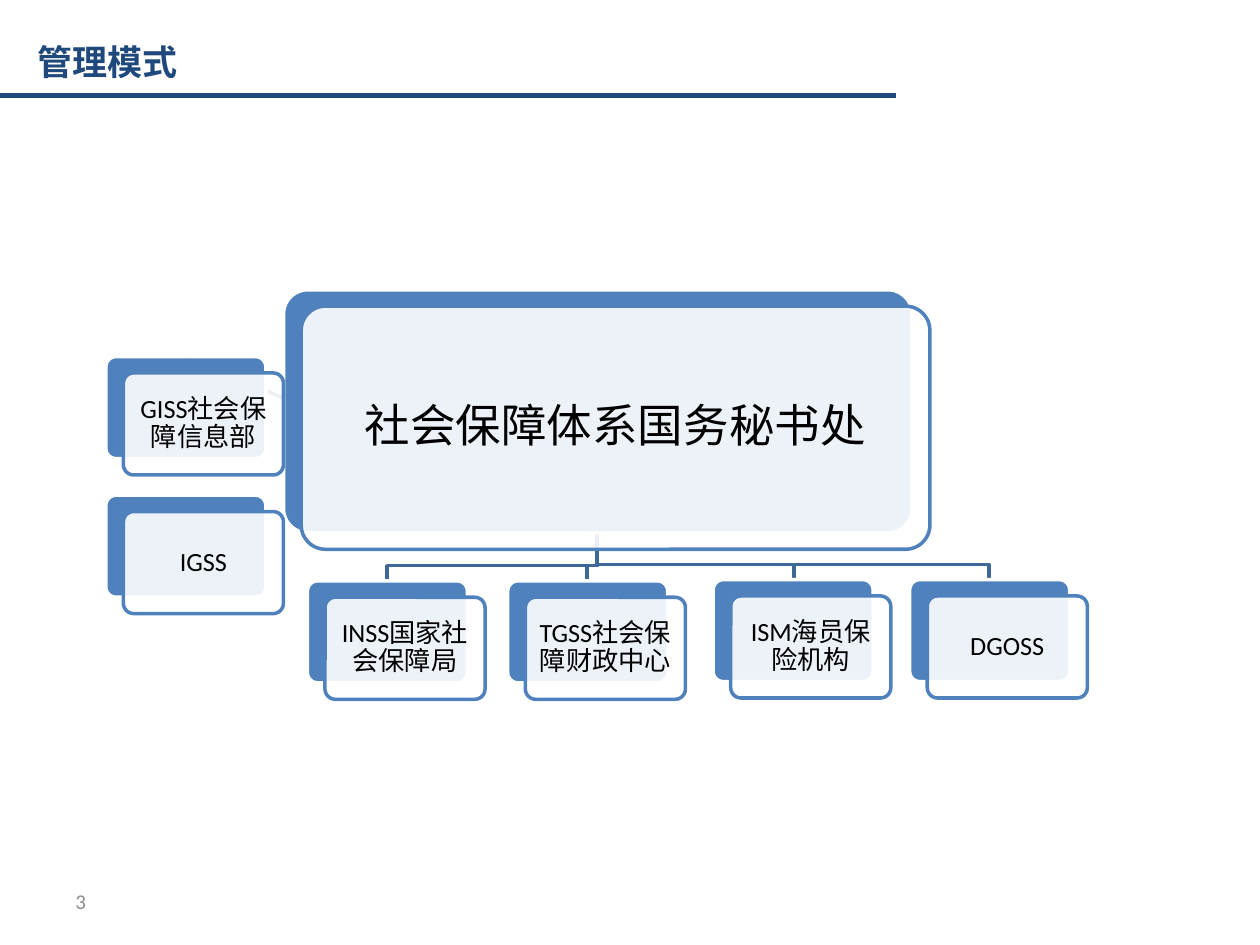
from dataclasses import dataclass
from typing import Optional

from lxml.etree import SubElement
from pptx import Presentation
from pptx.dml.color import RGBColor
from pptx.enum.shapes import MSO_CONNECTOR, MSO_SHAPE
from pptx.enum.text import MSO_ANCHOR, PP_ALIGN
from pptx.oxml.ns import qn
from pptx.util import Inches, Pt

FONT = "Calibri"
BLUE, NAVY, STEEL = "4F81BD", "1F497D", "3F6797"
WHITE, BLACK, GRAY = "FFFFFF", "000000", "8C8C8C"
SHIFT_X, SHIFT_Y = 0.14, 0.13
ROOT_X, ROOT_Y = 4.74, 4.23


@dataclass
class Node:
    text: str
    left: float
    top: float
    link: Optional[float] = None
    width: float = 1.27
    height: float = 0.81
    size: int = 15
    inset: float = 0.06


NODES = [
    Node("社会保障体系国务秘书处", 2.25, 2.3, None, 4.99, 1.93, 26, 0.11),
    Node("INSS国家社会保障局", 2.44, 4.61, 3.07),
    Node("TGSS社会保障财政中心", 4.03, 4.61, 4.66),
    Node("GISS社会保障信息部", 0.84, 2.83),
    Node("ISM海员保险机构", 5.66, 4.6, 6.3),
    Node("DGOSS", 7.22, 4.6, 7.85),
    Node("IGSS", 0.84, 3.93),
]


def paint(code: str) -> RGBColor:
    return RGBColor.from_string(code)


def write(frame, text: str, size: int, color: str, bold: bool = False):
    frame.word_wrap = True
    para = frame.paragraphs[0]
    para.text = text
    para.font.name = FONT
    para.font.size = Pt(size)
    para.font.bold = bold
    para.font.color.rgb = paint(color)
    return para


def label(slide, box: tuple, text: str, size: int, color: str, bold: bool = False):
    frame = slide.shapes.add_textbox(*map(Inches, box)).text_frame
    write(frame, text, size, color, bold)
    return frame


def branch(slide, points: list) -> None:
    spots = [(Inches(x), Inches(y)) for x, y in points]
    maker = slide.shapes.build_freeform(*spots[0])
    maker.add_line_segments(spots[1:], close=False)
    shape = maker.convert_to_shape()
    shape.shadow.inherit = False
    shape.fill.background()
    shape.line.color.rgb = paint(STEEL)
    shape.line.width = Pt(2)


def card(slide, box: tuple, fill: str, edge: str):
    shape = slide.shapes.add_shape(MSO_SHAPE.ROUNDED_RECTANGLE, *map(Inches, box))
    shape.adjustments[0] = 0.1
    shape.shadow.inherit = False
    shape.fill.solid()
    shape.fill.fore_color.rgb = paint(fill)
    shape.line.color.rgb = paint(edge)
    shape.line.width = Pt(2)
    return shape


def draw(slide, node: Node) -> None:
    size = (node.width, node.height)
    card(slide, (node.left, node.top, *size), BLUE, WHITE)
    front = card(slide, (node.left + SHIFT_X, node.top + SHIFT_Y, *size), WHITE, BLUE)
    tint = front.fill._xPr.find(qn("a:solidFill"))[0]
    SubElement(tint, qn("a:alpha"), val="90000")
    frame = front.text_frame
    frame.margin_left = frame.margin_right = Inches(node.inset)
    frame.margin_top = frame.margin_bottom = Inches(node.inset)
    frame.vertical_anchor = MSO_ANCHOR.MIDDLE
    para = write(frame, node.text, node.size, BLACK)
    para.alignment = PP_ALIGN.CENTER
    para.line_spacing = 0.9


def main() -> None:
    deck = Presentation()
    deck.slide_width, deck.slide_height = Inches(10), Inches(7.5)
    slide = deck.slides.add_slide(deck.slide_layouts[6])

    number = label(slide, (0.5, 6.95, 2.33, 0.4), "3", 12, GRAY)
    number.vertical_anchor = MSO_ANCHOR.MIDDLE

    branch(slide, [(ROOT_X, ROOT_Y), (1.48, 2.83)])
    for node in NODES:
        if node.link is not None:
            bend = node.top - 0.12
            branch(slide, [(ROOT_X, ROOT_Y), (ROOT_X, bend),
                           (node.link, bend), (node.link, node.top)])
    for node in NODES:
        draw(slide, node)

    label(slide, (0.2, 0.27, 3.78, 0.44), "管理模式", 20, NAVY, True)
    rule = slide.shapes.add_connector(
        MSO_CONNECTOR.STRAIGHT, 0, Inches(0.76), Inches(7.11), Inches(0.76))
    rule.line.color.rgb = paint(NAVY)
    rule.line.width = Pt(3)
    SubElement(rule._element.spPr, qn("a:effectLst"))

    deck.save("out.pptx")


if __name__ == "__main__":
    main()
